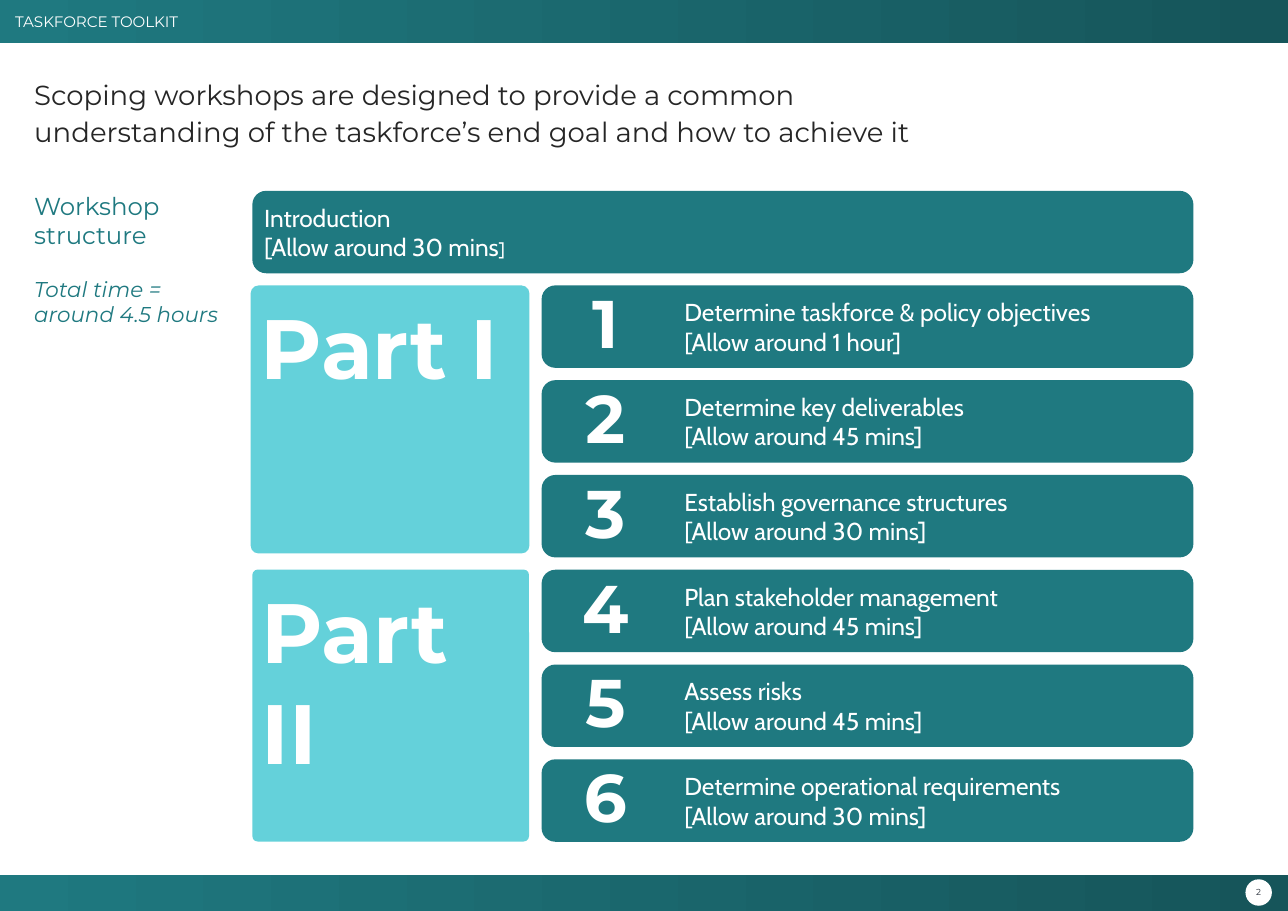
"""Builds the workshop structure slide of the taskforce toolkit."""
from pptx import Presentation, util as u
from pptx.dml.color import RGBColor
from pptx.enum import shapes, text

COLOURS = {"teal": "1F7980", "deep": "16555A", "aqua": "64D1DA",
           "white": "FFFFFF", "ink": "262626", "navy": "222A35"}
MIDDLE, CENTRE = text.MSO_ANCHOR.MIDDLE, text.PP_ALIGN.CENTER
FORMATS = {
    "header": {"size": u.Pt(9.9), "name": "Montserrat"},
    "page": {"size": u.Pt(5.7), "name": "Montserrat"},
    "title": {"size": u.Pt(18), "name": "Montserrat"},
    "step": {"size": u.Pt(16), "name": "Cabin"},
    "bracket": {"size": u.Pt(12), "name": "Cabin"},
    "number": {"size": u.Pt(44), "name": "Montserrat", "bold": True},
    "part": {"size": u.Pt(55), "name": "Montserrat", "bold": True},
    "structure": {"size": u.Pt(16), "name": "Montserrat"},
    "total": {"size": u.Pt(14), "name": "Montserrat", "italic": True},
}

deck = Presentation()
deck.slide_width, deck.slide_height = u.Cm(29.7), u.Cm(21)
slide = deck.slides.add_slide(deck.slide_layouts[6])


def block(box, fill=None, preset=shapes.MSO_SHAPE.ROUNDED_RECTANGLE,
          insets=(0, 0, 0, 0), anchor=text.MSO_ANCHOR.TOP):
    """Add a filled shape, or a plain text box when there is no fill."""
    box = [u.Cm(length) for length in box]
    if fill:
        part = slide.shapes.add_shape(preset, *box)
        part.shadow.inherit = False
        part.line.fill.background()
        part.fill.solid()
        part.fill.fore_color.rgb = RGBColor.from_string(COLOURS[fill])
    else:
        part = slide.shapes.add_textbox(*box)
    frame = part.text_frame
    frame.word_wrap = True
    frame.vertical_anchor = anchor
    for side, inset in zip(("left", "top", "right", "bottom"), insets):
        setattr(frame, f"margin_{side}", u.Cm(inset))
    return part


def write(part, paragraphs, colour="white", align=text.PP_ALIGN.LEFT):
    """Write paragraphs, each a list of (wording, format) runs."""
    frame = part.text_frame
    for index, runs in enumerate(paragraphs):
        paragraph = frame.add_paragraph() if index else frame.paragraphs[0]
        paragraph.alignment = align
        for wording, style in runs:
            run = paragraph.add_run()
            run.text = wording
            run.font.color.rgb = RGBColor.from_string(COLOURS[colour])
            for attribute, value in FORMATS[style].items():
                setattr(run.font, attribute, value)
    return frame


header = block((0, 0, 29.7, 1), "teal", shapes.MSO_SHAPE.RECTANGLE,
               (0.35, 0.15, 0.18, 0.15), MIDDLE)
footer = block((0, 20.17, 29.7, 0.83), "teal", shapes.MSO_SHAPE.RECTANGLE)
for band in (header, footer):
    band.fill.gradient()
    band.fill.gradient_angle = 0
    for stop, colour, position in zip(band.fill.gradient_stops, ("teal", "deep"), (0, 1)):
        stop.color.rgb = RGBColor.from_string(COLOURS[colour])
        stop.position = position
write(header, [[("TASKFORCE TOOLKIT", "header")]])

page = block((28.72, 20.27, 0.61, 0.61), "white", shapes.MSO_SHAPE.OVAL, anchor=MIDDLE)
write(page, [[("2", "page")]], "navy", CENTRE).word_wrap = False

title = write(block((0.79, 1.73, 22.23, 1.88)), [[(
    "Scoping workshops are designed to provide a common understanding of "
    "the taskforce’s end goal and how to achieve it", "title")]], "ink")
title.paragraphs[0].line_spacing = 1.1

structure = write(block((0.79, 4.4, 4.57, 3.18)), [
    [("Workshop structure", "structure")],
    [("Total time = around 4.5 hours", "total")]], "teal")
structure.paragraphs[1].space_before = u.Pt(17)

introduction = block((5.82, 4.4, 21.7, 1.9), "teal", insets=(0.18,) * 4, anchor=MIDDLE)
write(introduction, [[("Introduction", "step")],
                     [("[Allow around 30 mins", "step"), ("]", "bracket")]])

for name, box, corner in (("Part I", (5.78, 6.58, 6.43, 6.18), 0.03),
                          ("Part II", (5.82, 13.13, 6.38, 6.27), 0.02)):
    part = block(box, "aqua", insets=(0.18,) * 4)
    part.adjustments[0] = corner
    write(part, [[(name, "part")]])

STEPS = (("Determine taskforce & policy objectives", "1 hour"),
         ("Determine key deliverables", "45 mins"),
         ("Establish governance structures", "30 mins"),
         ("Plan stakeholder management", "45 mins"),
         ("Assess risks", "45 mins"),
         ("Determine operational requirements", "30 mins"))
for index, (task, duration) in enumerate(STEPS):
    top = 6.58 + 2.185 * index
    step = block((12.49, top, 15.03, 1.9), "teal", insets=(3.2, 0.18, 0.18, 0.18), anchor=MIDDLE)
    write(step, [[(task, "step")], [(f"[Allow around {duration}]", "step")]])
    number = block((12.83, top - 0.47, 2.26, 2.62), anchor=MIDDLE)
    write(number, [[(str(index + 1), "number")]], align=CENTRE)

deck.save("out.pptx")
